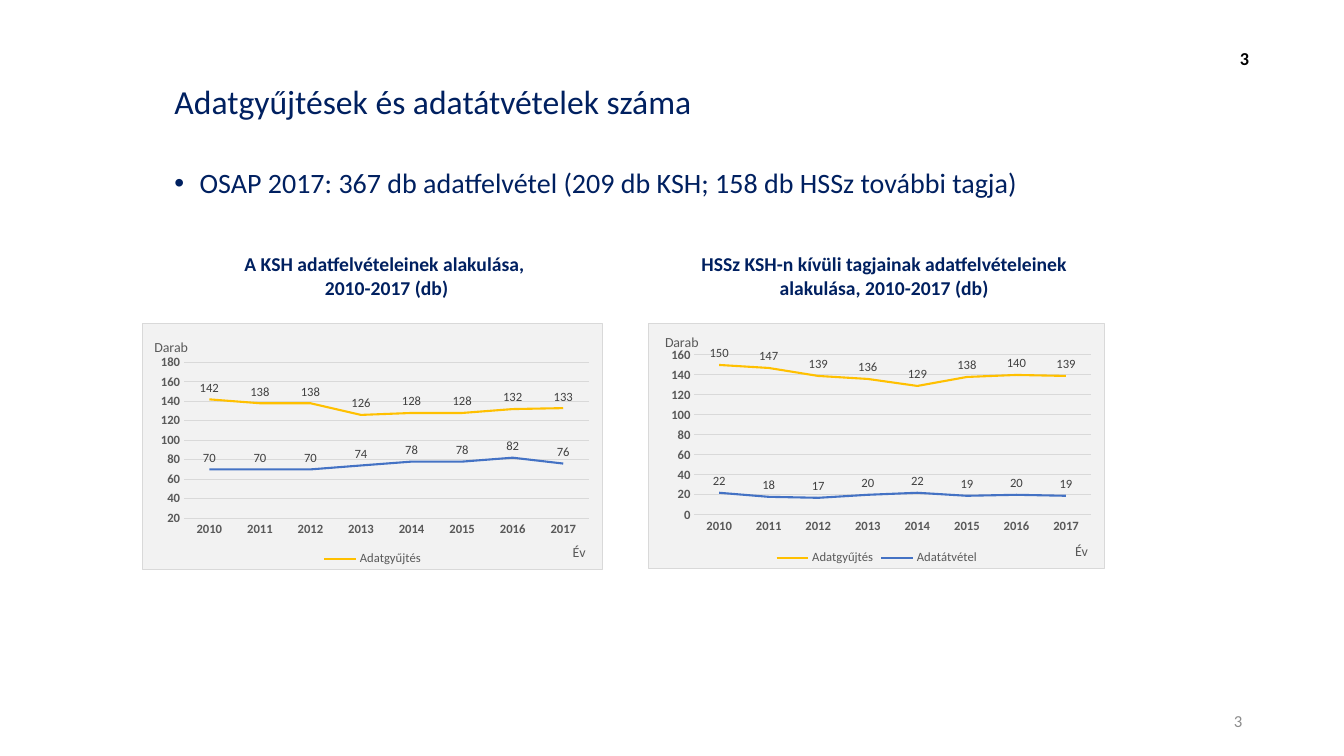
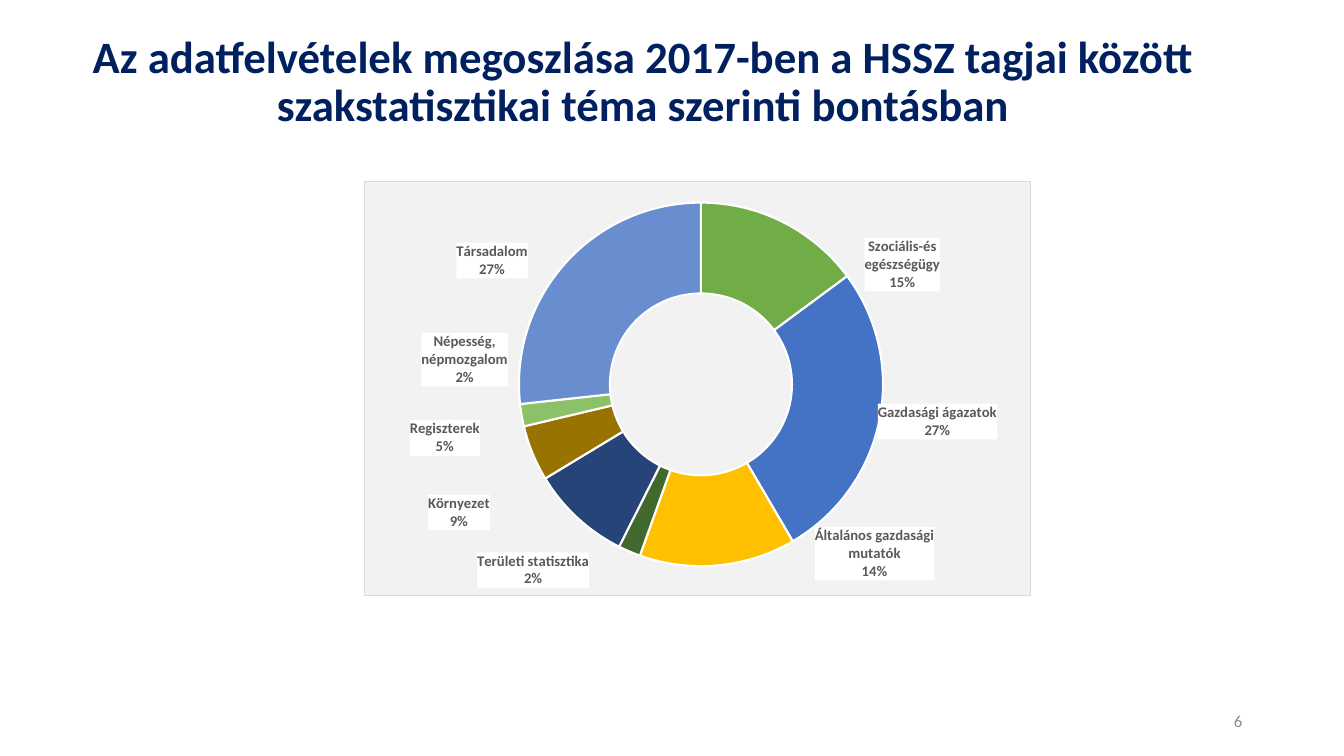
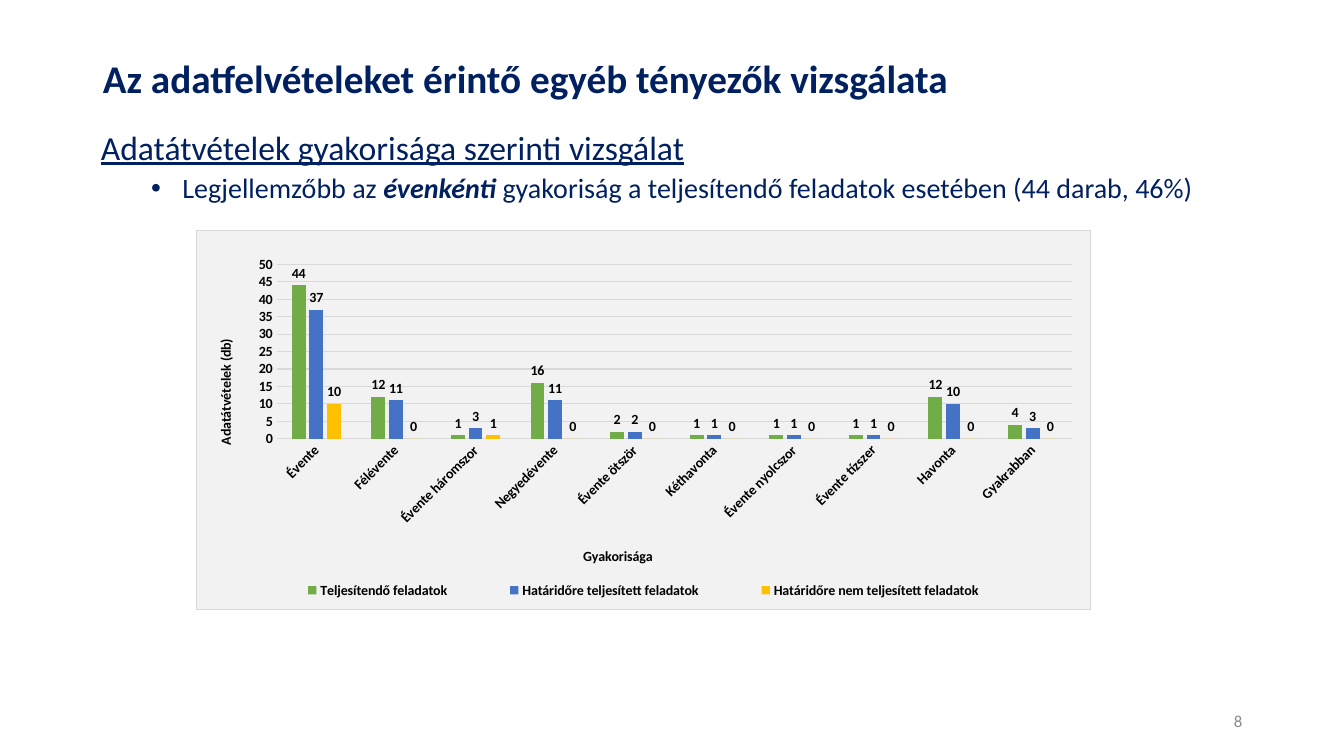
import copy
import itertools
import math

import pptx
import pptx.chart.data
import pptx.dml.color
import pptx.enum.chart
import pptx.enum.text
import pptx.oxml
import pptx.oxml.ns
import pptx.oxml.xmlchemy
import pptx.util

Inches = pptx.util.Inches
Pt = pptx.util.Pt
RGBColor = pptx.dml.color.RGBColor
ChartType = pptx.enum.chart.XL_CHART_TYPE
LabelPosition = pptx.enum.chart.XL_LABEL_POSITION
Align = pptx.enum.text.PP_ALIGN
Anchor = pptx.enum.text.MSO_ANCHOR
qn = pptx.oxml.ns.qn
new_element = pptx.oxml.xmlchemy.OxmlElement

FONT = "Calibri"
NAVY = RGBColor(0x00, 0x20, 0x60)
BLACK = RGBColor(0x00, 0x00, 0x00)
WHITE = RGBColor(0xFF, 0xFF, 0xFF)
FOOTER_GRAY = RGBColor(0x8C, 0x8C, 0x8C)
TEXT_GRAY = RGBColor(0x59, 0x59, 0x59)
LABEL_GRAY = RGBColor(0x40, 0x40, 0x40)
GRID_GRAY = RGBColor(0xD9, 0xD9, 0xD9)
PANEL_GRAY = RGBColor(0xF2, 0xF2, 0xF2)
GREEN = RGBColor(0x70, 0xAD, 0x47)
BLUE = RGBColor(0x44, 0x72, 0xC4)
GOLD = RGBColor(0xFF, 0xC0, 0x00)
DARK_GREEN = RGBColor(0x43, 0x68, 0x2B)
DARK_BLUE = RGBColor(0x26, 0x44, 0x78)
BROWN = RGBColor(0x99, 0x73, 0x00)
LIGHT_GREEN = RGBColor(0x8C, 0xC1, 0x68)
LIGHT_BLUE = RGBColor(0x69, 0x8E, 0xD0)

RING_CENTER = (0.5, 0.49)
RING_RADIUS = (0.2, 0.33)
TOPICS = [
    ("Szociális-és egészségügy", 15, GREEN, (0.8, 0.2)),
    ("Gazdasági ágazatok", 27, BLUE, (0.85, 0.58)),
    ("Általános gazdasági mutatók", 14, GOLD, (0.76, 0.9)),
    ("Területi statisztika", 2, DARK_GREEN, (0.25, 0.94)),
    ("Környezet", 9, DARK_BLUE, (0.14, 0.8)),
    ("Regiszterek", 5, BROWN, (0.12, 0.62)),
    ("Népesség, népmozgalom", 2, LIGHT_GREEN, (0.15, 0.43)),
    ("Társadalom", 27, LIGHT_BLUE, (0.19, 0.19)),
]


def style_font(font, size, color, bold=False):
    font.name = FONT
    font.size = Pt(size)
    font.bold = bold
    font.color.rgb = color


def place(shape, position):
    shape.left, shape.top, shape.width, shape.height = map(Inches, position)


def style_paragraph(para, size, color, bold=False, align=Align.LEFT, spacing=None):
    para.alignment = align
    para.space_before = Pt(0)
    if spacing:
        para.line_spacing = spacing
    for span in para.runs:
        style_font(span.font, size, color, bold)


def set_bullet(para, margin=0, hanging=0):
    properties = para._p.get_or_add_pPr()
    properties.set("marL", str(Inches(margin)))
    properties.set("indent", str(-Inches(hanging)))
    bullet = new_element("a:buChar" if hanging else "a:buNone")
    if hanging:
        bullet.set("char", "•")
    properties.append(bullet)


def set_title(page, text, position, size, bold=True, align=Align.LEFT):
    title = page.shapes.title
    place(title, position)
    frame = title.text_frame
    frame.text = text
    frame.word_wrap = True
    frame.auto_size = pptx.enum.text.MSO_AUTO_SIZE.NONE
    frame.vertical_anchor = Anchor.MIDDLE
    style_paragraph(frame.paragraphs[0], size, NAVY, bold, align, 0.9)


def body_frame(page, position):
    body = page.placeholders[1]
    place(body, position)
    body.text_frame.word_wrap = True
    body.text_frame.auto_size = pptx.enum.text.MSO_AUTO_SIZE.NONE
    return body.text_frame


def add_text(page, text, position, size, color, bold=False, align=Align.LEFT, anchor=Anchor.TOP):
    box = page.shapes.add_textbox(*map(Inches, position))
    frame = box.text_frame
    frame.word_wrap = True
    frame.vertical_anchor = anchor
    frame.text = text
    style_paragraph(frame.paragraphs[0], size, color, bold, align)


def add_page_number(page, number):
    add_text(page, number, (9.42, 6.95, 3, 0.4), 12, FOOTER_GRAY, align=Align.RIGHT, anchor=Anchor.MIDDLE)


def append_value(parent, tag, value):
    child = new_element(tag)
    child.set("val", str(value))
    parent.append(child)


def set_layout(parent, index, x, y, width=None, height=None, inner=False, edge=True):
    for old in parent.findall(qn("c:layout")):
        parent.remove(old)
    layout = new_element("c:layout")
    manual = new_element("c:manualLayout")
    layout.append(manual)
    if inner:
        append_value(manual, "c:layoutTarget", "inner")
    if edge:
        append_value(manual, "c:xMode", "edge")
        append_value(manual, "c:yMode", "edge")
    for tag, value in zip(("c:x", "c:y", "c:w", "c:h"), (x, y, width, height)):
        if value is not None:
            append_value(manual, tag, round(value, 4))
    parent.insert(index, layout)


def shape_properties(fill, line=None):
    border = ""
    if line:
        border = f'<a:ln w="{Pt(0.75)}"><a:solidFill><a:srgbClr val="{line}"/></a:solidFill></a:ln>'
    return pptx.oxml.parse_xml(
        f'<c:spPr {pptx.oxml.ns.nsdecls("c", "a")}>'
        f'<a:solidFill><a:srgbClr val="{fill}"/></a:solidFill>{border}</c:spPr>'
    )


def add_chart(page, kind, position, categories, series, plot_area, size=10, bold=False):
    data = pptx.chart.data.CategoryChartData()
    data.categories = categories
    for name, values in series:
        data.add_series(name, values)
    chart = page.shapes.add_chart(kind, *map(Inches, position), data).chart
    style_font(chart.font, size, BLACK, bold)
    chart.has_title = False
    root = chart.element
    root.find(qn("c:chart")).addnext(shape_properties(PANEL_GRAY, GRID_GRAY))
    set_layout(root.xpath(".//c:plotArea")[0], 0, *plot_area, inner=True)
    chart.plots[0].vary_by_categories = kind == ChartType.DOUGHNUT
    return chart


def style_axes(chart, size, color):
    for axis in (chart.category_axis, chart.value_axis):
        axis.major_tick_mark = axis.minor_tick_mark = pptx.enum.chart.XL_TICK_MARK.NONE
        style_font(axis.tick_labels.font, size, color, True)
    chart.category_axis.format.line.color.rgb = GRID_GRAY
    chart.category_axis.format.line.width = Pt(0.75)
    chart.value_axis.format.line.fill.background()
    chart.value_axis.has_major_gridlines = True
    grid = chart.value_axis.major_gridlines.format.line
    grid.color.rgb = GRID_GRAY
    grid.width = Pt(0.75)


def set_axis_title(chart, axis, tag, text, corner, color, bold, rotation=0):
    frame = axis.axis_title.text_frame
    frame.text = text
    style_font(frame.paragraphs[0].runs[0].font, 10, color, bold)
    title = chart.element.xpath(f".//{tag}/c:title")[0]
    title.xpath(".//a:bodyPr")[0].set("rot", str(rotation * 60000))
    set_layout(title, 1, *corner)


def add_legend(chart, size, color, bold=False):
    chart.has_legend = True
    chart.legend.position = pptx.enum.chart.XL_LEGEND_POSITION.BOTTOM
    chart.legend.include_in_layout = False
    style_font(chart.legend.font, size, color, bold)
    return chart.element.xpath(".//c:legend")[0]


def show_values(series, position, size, color, bold=False):
    labels = series.data_labels
    labels.show_value = True
    labels.position = position
    style_font(labels.font, size, color, bold)


def add_trend_chart(page, position, collected, received, plot_area, unit_corner):
    years = [str(year) for year in range(2010, 2018)]
    series = [("Adatgyűjtés", collected), ("Adatátvétel", received)]
    chart = add_chart(page, ChartType.LINE, position, years, series, plot_area)
    style_axes(chart, 9, TEXT_GRAY)
    set_axis_title(chart, chart.value_axis, "c:valAx", "Darab", unit_corner, TEXT_GRAY, False)
    set_axis_title(chart, chart.category_axis, "c:catAx", "Év", (0.93, 0.88), TEXT_GRAY, False)
    chart.value_axis.major_unit = 20
    for line, color in zip(chart.plots[0].series, (GOLD, BLUE)):
        line.smooth = False
        line.format.line.color.rgb = color
        line.format.line.width = Pt(1.5)
        show_values(line, LabelPosition.ABOVE, 9, LABEL_GRAY)
    return chart, add_legend(chart, 9, TEXT_GRAY)


def hide_legend_entry(legend, index):
    entry = new_element("c:legendEntry")
    append_value(entry, "c:idx", index)
    append_value(entry, "c:delete", 1)
    legend.find(qn("c:legendPos")).addnext(entry)


def place_ring_labels(chart, values, targets):
    labels = chart.plots[0].series[0].data_labels
    labels.show_value = False
    labels.show_category_name = True
    labels.show_percentage = True
    style_font(labels.font, 10.5, TEXT_GRAY, True)
    for leader in chart.element.xpath(".//c:showLeaderLines"):
        leader.set("val", "0")
    group = chart.element.xpath(".//c:ser/c:dLbls")[0]
    group.find(qn("c:txPr")).addprevious(shape_properties(WHITE))
    separator = new_element("c:separator")
    separator.text = "\n"
    group.find(qn("c:showBubbleSize")).addnext(separator)
    shared = [child for child in group if child.tag != qn("c:showLeaderLines")]
    total = sum(values)
    ends = itertools.accumulate(values)
    for index, (value, end, target) in enumerate(zip(values, ends, targets)):
        angle = 2 * math.pi * (end - value / 2) / total
        offset_x = target[0] - RING_CENTER[0] - RING_RADIUS[0] * math.sin(angle)
        offset_y = target[1] - RING_CENTER[1] + RING_RADIUS[1] * math.cos(angle)
        label = new_element("c:dLbl")
        append_value(label, "c:idx", index)
        set_layout(label, 1, offset_x, offset_y, edge=False)
        for child in shared:
            label.append(copy.deepcopy(child))
        group.insert(index, label)


def build_counts(deck):
    page = deck.slides.add_slide(deck.slide_layouts[1])
    add_page_number(page, "3")
    add_text(page, "3", (12.2, 0.38, 0.39, 0.4), 13, BLACK, True, anchor=Anchor.MIDDLE)
    set_title(page, "Adatgyűjtések és adatátvételek száma", (1.63, 0.78, 5.67, 0.49), 24, False)
    para = body_frame(page, (1.63, 1.63, 8.77, 0.46)).paragraphs[0]
    para.text = "OSAP 2017: 367 db adatfelvétel (209 db KSH; 158 db HSSz további tagja)"
    set_bullet(para, 0.25, 0.25)
    style_paragraph(para, 20, NAVY, align=Align.JUSTIFY, spacing=0.9)
    captions = [
        ("A KSH adatfelvételeinek alakulása, \v2010-2017 (db)", 2.25, 3.17),
        ("HSSz KSH-n kívüli tagjainak adatfelvételeinek alakulása, 2010-2017 (db)", 6.82, 3.9),
    ]
    for text, left, width in captions:
        add_text(page, text, (left, 2.45, width, 0.57), 14, NAVY, True, Align.CENTER)
    chart, legend = add_trend_chart(
        page, (6.43, 3.2, 4.53, 2.45),
        (150, 147, 139, 136, 129, 138, 140, 139), (22, 18, 17, 20, 22, 19, 20, 19),
        (0.1, 0.13, 0.87, 0.65), (0.03, 0.03))
    chart.value_axis.minimum_scale = 0
    chart, legend = add_trend_chart(
        page, (1.41, 3.2, 4.57, 2.46),
        (142, 138, 138, 126, 128, 128, 132, 133), (70, 70, 70, 74, 78, 78, 82, 76),
        (0.09, 0.12, 0.88, 0.67), (0.02, 0.05))
    chart.value_axis.minimum_scale = 20
    chart.value_axis.maximum_scale = 190
    hide_legend_entry(legend, 1)


def build_topics(deck):
    page = deck.slides.add_slide(deck.slide_layouts[5])
    set_title(
        page,
        "Az adatfelvételek megoszlása 2017-ben a HSSZ tagjai között szakstatisztikai téma szerinti bontásban",
        (0.63, 0.1, 11.5, 1.45), 32, align=Align.CENTER)
    add_page_number(page, "6")
    names, values, colors, targets = zip(*TOPICS)
    chart = add_chart(page, ChartType.DOUGHNUT, (3.61, 1.8, 6.62, 4.11), names,
                      [("Adatfelvételek", values)], (0.23, 0.05, 0.55, 0.88), 10.5, True)
    chart.has_legend = False
    for index, color in enumerate(colors):
        look = chart.plots[0].series[0].points[index].format
        look.fill.solid()
        look.fill.fore_color.rgb = color
        look.line.color.rgb = WHITE
        look.line.width = Pt(1.5)
    place_ring_labels(chart, values, targets)


def build_frequency(deck):
    page = deck.slides.add_slide(deck.slide_layouts[1])
    set_title(page, "Az adatfelvételeket érintő egyéb tényezők vizsgálata", (0.92, 0.4, 11.5, 0.81), 28)
    frame = body_frame(page, (0.9, 1.25, 11.5, 4.76))
    heading = frame.paragraphs[0]
    heading.text = "Adatátvételek gyakorisága szerinti vizsgálat"
    set_bullet(heading)
    style_paragraph(heading, 24, NAVY, spacing=0.9)
    heading.runs[0].font.underline = True
    finding = frame.add_paragraph()
    finding.level = 1
    for text in ("Legjellemzőbb az ", "évenkénti ",
                 "gyakoriság a teljesítendő feladatok esetében (44 darab, 46%)"):
        finding.add_run().text = text
    set_bullet(finding, 0.81, 0.31)
    style_paragraph(finding, 20, NAVY, spacing=0.9)
    finding.space_before = Pt(5)
    finding.runs[1].font.bold = finding.runs[1].font.italic = True
    add_page_number(page, "8")
    categories = ["Évente", "Félévente", "Évente háromszor", "Negyedévente", "Évente ötször",
                  "Kéthavonta", "Évente nyolcszor", "Évente tízszer", "Havonta", "Gyakrabban"]
    series = [
        ("Teljesítendő feladatok", (44, 12, 1, 16, 2, 1, 1, 1, 12, 4)),
        ("Határidőre teljesített feladatok", (37, 11, 3, 11, 2, 1, 1, 1, 10, 3)),
        ("Határidőre nem teljesített feladatok", (10, 0, 1, 0, 0, 0, 0, 0, 0, 0)),
    ]
    chart = add_chart(page, ChartType.COLUMN_CLUSTERED, (1.94, 2.28, 8.88, 3.77),
                      categories, series, (0.09, 0.09, 0.89, 0.46), bold=True)
    style_axes(chart, 10, BLACK)
    chart.element.xpath(".//c:catAx/c:txPr/a:bodyPr")[0].set("rot", str(-45 * 60000))
    set_axis_title(chart, chart.category_axis, "c:catAx", "Gyakorisága", (0.43, 0.83), BLACK, True)
    set_axis_title(chart, chart.value_axis, "c:valAx", "Adatátvételek (db)", (0.02, 0.28), BLACK, True, -90)
    plot = chart.plots[0]
    plot.gap_width = 219
    plot.overlap = -27
    for bars, color in zip(plot.series, (GREEN, BLUE, GOLD)):
        bars.format.fill.solid()
        bars.format.fill.fore_color.rgb = color
        show_values(bars, LabelPosition.OUTSIDE_END, 10, BLACK, True)
    legend = add_legend(chart, 10, BLACK, True)
    set_layout(legend, 1, 0.06, 0.91, 0.88, 0.08)


def main():
    deck = pptx.Presentation()
    deck.slide_width = Inches(13.33)
    deck.slide_height = Inches(7.5)
    build_counts(deck)
    build_topics(deck)
    build_frequency(deck)
    deck.save("out.pptx")


if __name__ == "__main__":
    main()
